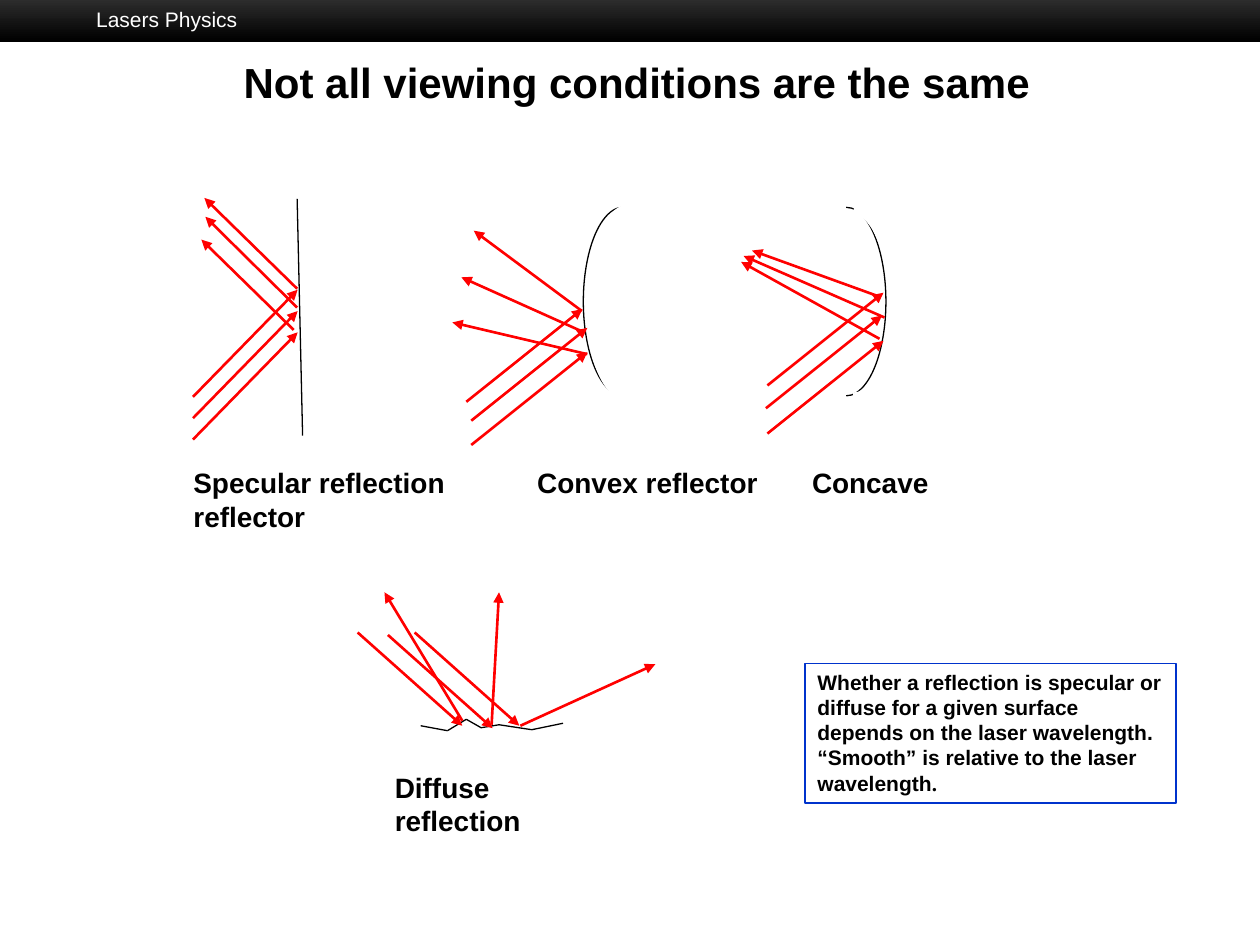
from dataclasses import dataclass
from itertools import pairwise

from pptx import Presentation
from pptx.dml.color import RGBColor
from pptx.enum.shapes import MSO_CONNECTOR, MSO_SHAPE
from pptx.enum.text import MSO_ANCHOR, MSO_AUTO_SIZE, PP_ALIGN
from pptx.oxml import parse_xml
from pptx.oxml.ns import nsdecls
from pptx.util import Cm, Pt

COLORS = {
    "ray": "FF0000",
    "ink": "000000",
    "paper": "FFFFFF",
    "border": "0033CC",
    "header_top": "333333",
}
Point = tuple[float, float]
Area = tuple[float, float, float, float]
BEHIND_MIRROR = (0.16, -0.05)
BEHIND_ARC = (0.15, 0.04)
ARC_SIZE = (0.8, 3.8)


@dataclass
class Reflection:
    incoming_step: Point
    incoming_starts: list[Point]
    outgoing: list[tuple[Point, Point]]


@dataclass
class Arc:
    kind: MSO_SHAPE
    corner: Point


REFLECTIONS = [
    Reflection((2.11, -2.16), [(3.89, 8.0), (3.89, 8.43), (3.89, 8.86)],
               [((5.99, 5.82), (4.12, 3.99)), ((5.99, 6.2), (4.14, 4.37)),
                ((5.92, 6.65), (4.06, 4.83))]),
    Reflection((2.34, -1.87), [(9.4, 8.1), (9.5, 8.48), (9.5, 8.97)],
               [((11.73, 6.27), (9.55, 4.65)), ((11.73, 6.68), (9.3, 5.59)),
                ((11.84, 7.14), (9.12, 6.5))]),
    Reflection((2.34, -1.87), [(15.47, 7.77), (15.44, 8.23), (15.47, 8.74)],
               [((17.7, 5.97), (15.16, 5.05)), ((17.83, 6.4), (14.99, 5.16)),
                ((17.73, 6.83), (14.94, 5.28))]),
    Reflection((2.11, 1.88), [(7.21, 12.75), (7.82, 12.8), (8.36, 12.75)],
               [((9.32, 14.53), (7.75, 11.94)), ((9.91, 14.61), (10.06, 11.94)),
                ((10.49, 14.63), (13.21, 13.39))]),
]
ARCS = [Arc(MSO_SHAPE.RIGHT_BRACKET, (17.06, 4.18)), Arc(MSO_SHAPE.LEFT_BRACKET, (11.76, 4.18))]
MIRROR = ((6.1, 8.78), (5.99, 4.01))
ROUGH_SURFACE = [(8.48, 14.63), (9.02, 14.73), (9.4, 14.5), (9.7, 14.67),
                 (10.06, 14.61), (10.72, 14.71), (11.35, 14.58)]


def color(name: str) -> RGBColor:
    return RGBColor.from_string(COLORS[name])


def shift(point: Point, step: Point) -> Point:
    return point[0] + step[0], point[1] + step[1]


def lengths(values: tuple[float, ...]) -> list[Cm]:
    return [Cm(value) for value in values]


def draw_line(page, start: Point, end: Point, ink: str, width: float, arrow: bool = False) -> None:
    line = page.shapes.add_connector(MSO_CONNECTOR.STRAIGHT, *lengths((*start, *end)))
    line.line.color.rgb = color(ink)
    line.line.width = Pt(width)
    if arrow:
        line.line._get_or_add_ln().append(
            parse_xml(f'<a:tailEnd {nsdecls("a")} type="triangle"/>'))
    line._element.spPr.append(parse_xml(f'<a:effectLst {nsdecls("a")}/>'))


def add_outline(page, kind: MSO_SHAPE, area: Area, ink: str, width: float):
    box = page.shapes.add_shape(kind, *lengths(area))
    box.shadow.inherit = False
    box.fill.background()
    box.line.color.rgb = color(ink)
    box.line.width = Pt(width)
    return box


def draw_arc(page, arc: Arc, offset: Point, ink: str, width: float) -> None:
    area = (*shift(arc.corner, offset), *ARC_SIZE)
    curve = add_outline(page, arc.kind, area, ink, width)
    curve.adjustments[0] = 0.5 * ARC_SIZE[1] / ARC_SIZE[0]


def draw_reflection(page, reflection: Reflection) -> None:
    for start in reflection.incoming_starts:
        draw_line(page, start, shift(start, reflection.incoming_step), "ray", 1.5, True)
    for start, end in reflection.outgoing:
        draw_line(page, start, end, "ray", 1.5, True)


def write(box, text: str, size: float, ink: str = "ink", bold: bool = True):
    frame = box.text_frame
    frame.word_wrap = True
    frame.vertical_anchor = MSO_ANCHOR.TOP
    para = frame.paragraphs[0]
    para.alignment = PP_ALIGN.LEFT
    add_span(para, text, size, ink, bold)
    return para


def add_span(para, text: str, size: float, ink: str, bold: bool, family: str = "Arial") -> None:
    span = para.add_run()
    span.text = text
    span.font.name = family
    span.font.size = Pt(size)
    span.font.bold = bold
    span.font.color.rgb = color(ink)


def add_label(page, area: Area, text: str, size: float, ink: str = "ink", bold: bool = True):
    return write(page.shapes.add_textbox(*lengths(area)), text, size, ink, bold)


def add_tabs(para, positions: list[float]) -> None:
    stops = "".join(f'<a:tab pos="{Cm(position)}" algn="l"/>' for position in positions)
    para._p.get_or_add_pPr().append(
        parse_xml(f'<a:tabLst {nsdecls("a")}>{stops}</a:tabLst>'))


def add_header(page) -> None:
    bar = page.shapes.add_shape(MSO_SHAPE.RECTANGLE, *lengths((0, -0.13, 25.4, 0.97)))
    bar.shadow.inherit = False
    bar.line.fill.background()
    bar.fill.gradient()
    bar.fill.gradient_angle = 270
    for stop, name in zip(bar.fill.gradient_stops, ("header_top", "ink")):
        stop.color.rgb = color(name)
    add_label(page, (1.69, 0, 14.17, 0.84), "Lasers Physics", 12, "paper", False)


def add_title(page) -> None:
    title = page.shapes.title
    title.left, title.top, title.width, title.height = lengths((2.11, 1.02, 19.08, 1.3))
    title.text_frame.margin_left = Cm(2.8)
    title.text_frame.margin_right = Cm(0)
    write(title, "Not all viewing conditions are the same", 24)


def add_note(page) -> None:
    box = add_outline(page, MSO_SHAPE.RECTANGLE, (16.23, 13.37, 7.48, 2.82), "border", 0.75)
    para = write(box, "Whether a reflection is specular or diffuse for a given surface depends on "
                 "the laser wavelength. “Smooth” is relative to the laser wavelength", 12)
    add_span(para, ".", 12, "ink", True, "Times New Roman")
    box.text_frame.auto_size = MSO_AUTO_SIZE.SHAPE_TO_FIT_TEXT


def main() -> None:
    deck = Presentation()
    deck.slide_width, deck.slide_height = Cm(25.4), Cm(19.05)
    page = deck.slides.add_slide(deck.slide_layouts[5])
    add_header(page)
    add_title(page)

    for start, end in pairwise(ROUGH_SURFACE):
        draw_line(page, start, end, "ink", 0.75)
    for arc in ARCS:
        draw_arc(page, arc, (0, 0), "ink", 0.75)
        draw_arc(page, arc, BEHIND_ARC, "paper", 6)
    draw_line(page, *MIRROR, "ink", 0.75)
    draw_line(page, *(shift(point, BEHIND_MIRROR) for point in MIRROR), "paper", 6)
    for reflection in REFLECTIONS:
        draw_reflection(page, reflection)

    captions = add_label(page, (3.65, 9.26, 16.87, 0.94),
                         "Specular reflection\tConvex reflector\tConcave reflector", 16)
    add_tabs(captions, [6.93, 12.47])
    add_label(page, (7.71, 15.4, 4.2, 0.94), "Diffuse reflection", 16)
    add_note(page)
    deck.save("out.pptx")


if __name__ == "__main__":
    main()
